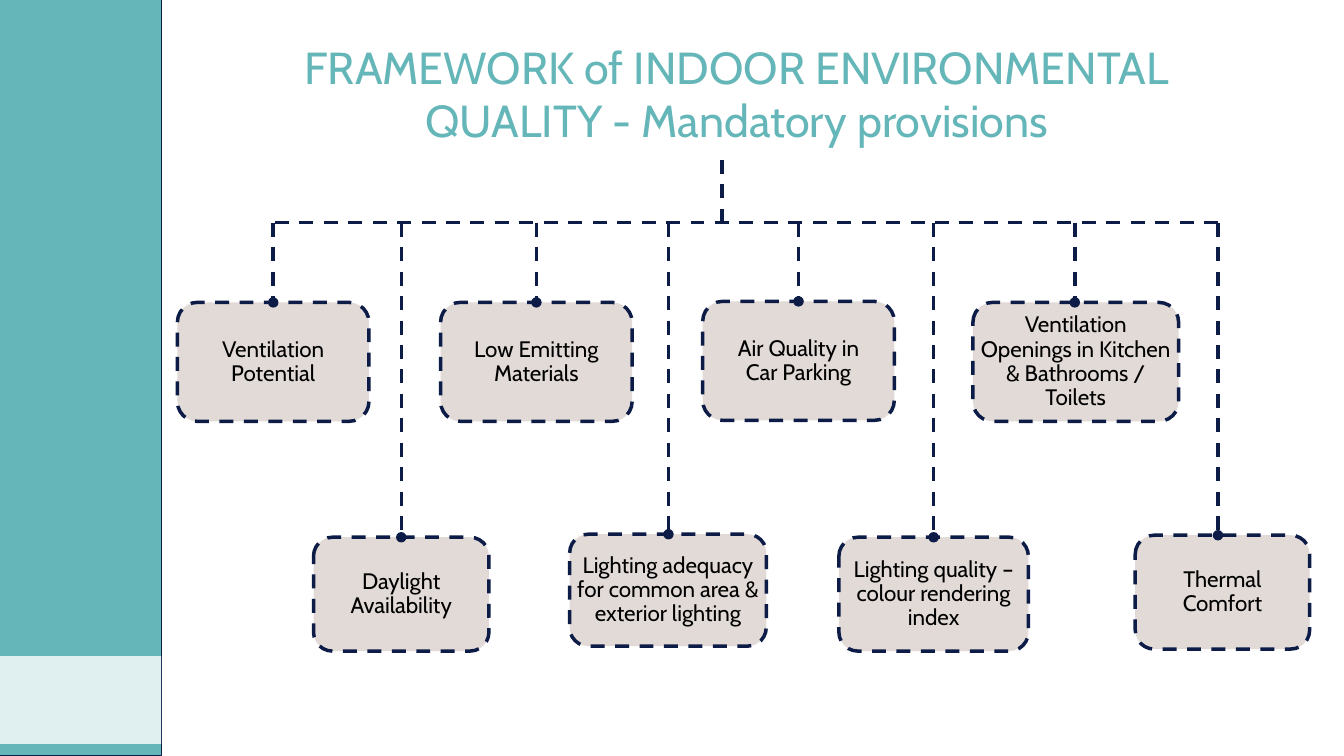
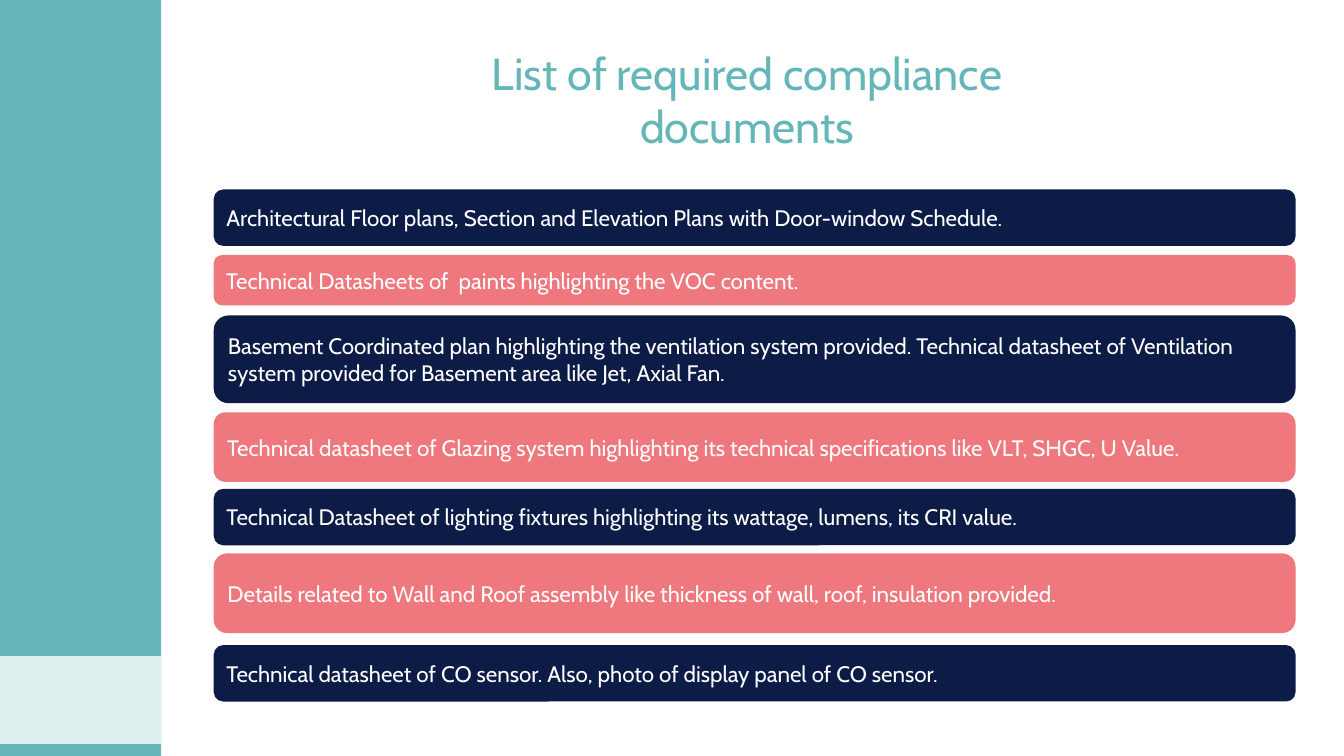
from dataclasses import dataclass

from lxml.etree import SubElement
from pptx import Presentation
from pptx.dml.color import RGBColor
from pptx.enum.dml import MSO_LINE
from pptx.enum.shapes import MSO_CONNECTOR, MSO_SHAPE
from pptx.enum.text import MSO_ANCHOR, MSO_AUTO_SIZE, PP_ALIGN
from pptx.oxml.ns import qn
from pptx.util import Inches, Pt


@dataclass(frozen=True)
class Theme:
    teal: RGBColor = RGBColor(0x64, 0xB6, 0xB8)
    pale_teal: RGBColor = RGBColor(0xE0, 0xF0, 0xF1)
    navy: RGBColor = RGBColor(0x0D, 0x1C, 0x47)
    coral: RGBColor = RGBColor(0xEE, 0x78, 0x7D)
    sand: RGBColor = RGBColor(0xE1, 0xDA, 0xD7)
    black: RGBColor = RGBColor(0, 0, 0)
    white: RGBColor = RGBColor(255, 255, 255)
    font: str = "Cabin"
    title_size: Pt = Pt(32)
    body_size: Pt = Pt(16)
    dash_width: Pt = Pt(2.5)


theme = Theme()
presentation = Presentation()
presentation.slide_width = Inches(13.33)
presentation.slide_height = Inches(7.5)


def add_block(slide, kind, left, top, width, height, fill, text="", color=theme.white,
              align=PP_ALIGN.LEFT, side_margin=0.1):
    shape = slide.shapes.add_shape(kind, Inches(left), Inches(top), Inches(width), Inches(height))
    shape.shadow.inherit = False
    shape.fill.solid()
    shape.fill.fore_color.rgb = fill
    shape.line.fill.background()
    if text:
        frame = shape.text_frame
        frame.word_wrap = True
        frame.vertical_anchor = MSO_ANCHOR.MIDDLE
        frame.margin_left = frame.margin_right = Inches(side_margin)
        frame.margin_top = frame.margin_bottom = 0
        paragraph = frame.paragraphs[0]
        paragraph.text = text
        paragraph.alignment = align
        paragraph.font.name = theme.font
        paragraph.font.size = theme.body_size
        paragraph.font.color.rgb = color
    return shape


def add_dashed_line(slide, start_x, start_y, end_x, end_y, dot=False):
    connector = slide.shapes.add_connector(
        MSO_CONNECTOR.STRAIGHT, Inches(start_x), Inches(start_y), Inches(end_x), Inches(end_y))
    connector.line.color.rgb = theme.navy
    connector.line.width = theme.dash_width
    connector.line.dash_style = MSO_LINE.DASH
    properties = connector._element.spPr
    if dot:
        SubElement(properties.find(qn("a:ln")), qn("a:tailEnd"), type="oval")
    SubElement(properties, qn("a:effectLst"))


titles = [
    ("FRAMEWORK of INDOOR ENVIRONMENTAL QUALITY - Mandatory provisions", 2.09, 0.34, 10.44),
    ("List of required compliance documents", 4.09, 0.4, 6.64),
]
side_bands = []
for text, left, top, width in titles:
    slide = presentation.slides.add_slide(presentation.slide_layouts[5])
    side_bands.append(add_block(slide, MSO_SHAPE.RECTANGLE, 0, 0, 1.6, 7.5, theme.teal))
    add_block(slide, MSO_SHAPE.RECTANGLE, 0, 6.51, 1.6, 0.87, theme.pale_teal)
    title = slide.shapes.title
    title.left, title.top = Inches(left), Inches(top)
    title.width, title.height = Inches(width), Inches(1.18)
    frame = title.text_frame
    frame.word_wrap = True
    frame.auto_size = MSO_AUTO_SIZE.NONE
    frame.vertical_anchor = MSO_ANCHOR.TOP
    frame.margin_left = frame.margin_right = Inches(0.05)
    frame.margin_top = frame.margin_bottom = Inches(0.05)
    paragraph = frame.paragraphs[0]
    paragraph.text = text
    paragraph.alignment = PP_ALIGN.CENTER
    paragraph.font.name = theme.font
    paragraph.font.size = theme.title_size
    paragraph.font.color.rgb = theme.teal

framework_slide, documents_slide = presentation.slides
side_bands[0].line.color.rgb = theme.navy
side_bands[0].line.width = Pt(0.75)

bar_y = 2.21
provisions = [
    ("Ventilation Potential", 2.71, 1.76, 3, 1.9, 1.18, 0.25),
    ("Daylight Availability", 3.98, 3.11, 5.33, 1.74, 1.13, 0.25),
    ("Low Emitting Materials", 5.32, 4.37, 3, 1.9, 1.18, 0.25),
    ("Lighting adequacy for common area & exterior lighting", 6.63, 5.65, 5.3, 1.95, 1.11, 0),
    ("Air Quality in Car Parking", 7.92, 6.97, 2.99, 1.9, 1.18, 0.25),
    ("Lighting quality – colour rendering index", 9.26, 8.32, 5.33, 1.88, 1.13, 0),
    ("Ventilation Openings in Kitchen & Bathrooms / Toilets", 10.66, 9.65, 3, 2.04, 1.18, 0),
    ("Thermal Comfort", 12.08, 11.26, 5.31, 1.73, 1.13, 0.25),
]
add_dashed_line(framework_slide, provisions[-1][1], bar_y, provisions[0][1], bar_y)
add_dashed_line(framework_slide, 7.16, bar_y, 7.16, 1.55)
for text, stem_x, left, top, width, height, side_margin in provisions:
    box = add_block(framework_slide, MSO_SHAPE.ROUNDED_RECTANGLE, left, top, width, height,
                    theme.sand, text, theme.black, PP_ALIGN.CENTER, side_margin)
    box.text_frame.paragraphs[0].line_spacing = 0.9
    box.line.color.rgb = theme.navy
    box.line.width = theme.dash_width
    box.line.dash_style = MSO_LINE.DASH
    add_dashed_line(framework_slide, stem_x, bar_y, stem_x, top, dot=True)

documents = [
    ("Architectural Floor plans, Section and Elevation Plans with Door-window Schedule.", 1.88, 0.56),
    ("Technical Datasheets of  paints highlighting the VOC content.", 2.53, 0.5),
    ("Basement Coordinated plan highlighting the ventilation system provided. Technical datasheet "
     "of Ventilation system provided for Basement area like Jet, Axial Fan.", 3.13, 0.87),
    ("Technical datasheet of Glazing system highlighting its technical specifications like VLT, "
     "SHGC, U Value.", 4.09, 0.69),
    ("Technical Datasheet of lighting fixtures highlighting its wattage, lumens, its CRI value.",
     4.85, 0.56),
    ("Details related to Wall and Roof assembly like thickness of wall, roof, insulation provided.",
     5.49, 0.79),
    ("Technical datasheet of CO sensor. Also, photo of display panel of CO sensor.", 6.4, 0.56),
]
for index, (text, top, height) in enumerate(documents):
    fill = theme.coral if index % 2 else theme.navy
    add_block(documents_slide, MSO_SHAPE.ROUNDED_RECTANGLE, 2.12, top, 10.73, height, fill, text)

presentation.save("out.pptx")
